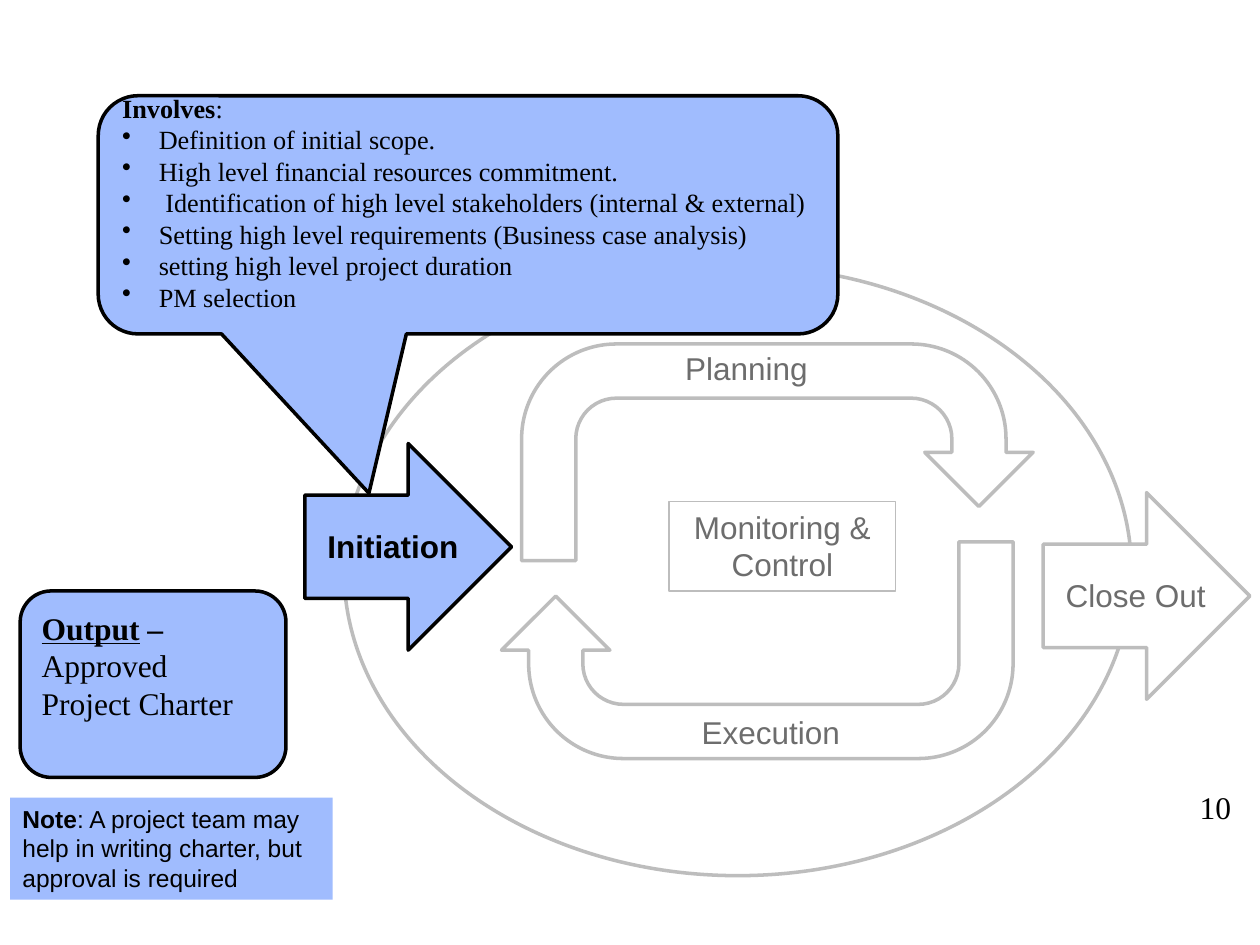
from dataclasses import dataclass

from lxml.etree import SubElement
from pptx import Presentation
from pptx.dml.color import RGBColor
from pptx.enum.shapes import MSO_SHAPE
from pptx.enum.text import MSO_ANCHOR, PP_ALIGN
from pptx.oxml.ns import qn
from pptx.util import Inches, Pt

SANS, SERIF = "Arial", "Times New Roman"
BLACK, WHITE, BLUE = "000000", "FFFFFF", "A0BCFE"
EDGE, GRAY = "BDBDBD", "6D6D6D"


@dataclass
class Box:
    left: float
    top: float
    width: float
    height: float

    def place(self):
        return [Inches(n) for n in (self.left, self.top, self.width, self.height)]


@dataclass
class Style:
    font: str
    size: float
    color: str = BLACK
    bold: bool | None = None


@dataclass
class Label:
    text: str
    box: Box
    style: Style


@dataclass
class Part:
    text: str
    bold: bool = False
    under: bool = False


def color(code: str) -> RGBColor:
    return RGBColor.from_string(code)


def draw(slide, kind, box: Box, fill=None, line=None, weight=2.0, adjust=()):
    shape = slide.shapes.add_shape(kind, *box.place())
    shape.shadow.inherit = False
    if fill:
        shape.fill.solid()
        shape.fill.fore_color.rgb = color(fill)
    else:
        shape.fill.background()
    if line:
        shape.line.color.rgb = color(line)
        shape.line.width = Pt(weight)
    else:
        shape.line.fill.background()
    for i, value in enumerate(adjust):
        shape.adjustments[i] = value
    return shape


def setup(shape, anchor=MSO_ANCHOR.TOP, bottom=0.05):
    frame = shape.text_frame
    frame.word_wrap = True
    frame.vertical_anchor = anchor
    frame.margin_bottom = Inches(bottom)
    return frame


def write(para, parts: list[Part], style: Style, align=PP_ALIGN.LEFT):
    para.alignment = align
    font = para.font
    font.name, font.size, font.bold = style.font, Pt(style.size), style.bold
    font.color.rgb = color(style.color)
    for part in parts:
        run = para.add_run()
        run.text = part.text
        if part.bold:
            run.font.bold = True
        if part.under:
            run.font.underline = True


def bullet(para, indent: float):
    props = para._p.get_or_add_pPr()
    props.set("marL", str(Inches(indent)))
    props.set("indent", str(-Inches(indent)))
    mark = SubElement(props, qn("a:buChar"))
    mark.set("char", "•")
    props.insert(0, mark)


def cycle(slide):
    """Draw the project phases and their labels."""
    draw(slide, MSO_SHAPE.OVAL, Box(2.73, 2.11, 6.25, 4.84), WHITE, EDGE)
    turns = [(Box(4.14, 2.73, 4.06, 1.72), 0), (Box(3.98, 4.3, 4.06, 1.72), 180)]
    for box, angle in turns:
        turn = draw(slide, MSO_SHAPE.U_TURN_ARROW, box, WHITE, EDGE)
        turn.rotation = angle
    arrows = [(8.28, 3.91, WHITE, EDGE), (2.42, 3.52, BLUE, BLACK)]
    for left, top, fill, line in arrows:
        draw(slide, MSO_SHAPE.RIGHT_ARROW, Box(left, top, 1.64, 1.64), fill, line)

    plain = Style(SANS, 18, GRAY)
    labels = [
        Label("Planning", Box(5.34, 2.72, 1.8, 0.4), plain),
        Label("Execution", Box(5.47, 5.61, 1.8, 0.4), plain),
        Label("Initiation", Box(2.5, 4.13, 1.8, 0.4), Style(SANS, 18, BLACK, True)),
        Label("Close Out", Box(8.36, 4.52, 1.56, 0.4), plain),
    ]
    for label in labels:
        text = slide.shapes.add_textbox(*label.box.place())
        write(setup(text).paragraphs[0], [Part(label.text)], label.style)

    control = draw(slide, MSO_SHAPE.RECTANGLE, Box(5.31, 3.98, 1.8, 0.71),
                   line=EDGE, weight=0.75)
    write(setup(control).paragraphs[0], [Part("Monitoring & Control")],
          plain, PP_ALIGN.CENTER)


def callout(slide):
    shape = draw(slide, MSO_SHAPE.ROUNDED_RECTANGULAR_CALLOUT,
                 Box(0.78, 0.76, 5.87, 1.89), BLUE, BLACK,
                 adjust=(-0.134, 1.169, 0.167))
    frame = setup(shape, MSO_ANCHOR.MIDDLE, bottom=0.25)
    style = Style(SERIF, 15)
    write(frame.paragraphs[0], [Part("Involves", bold=True), Part(":")], style)
    items = [
        "Definition of initial scope.",
        "High level financial resources commitment.",
        " Identification of high level stakeholders (internal & external)",
        "Setting high level requirements (Business case analysis)",
        "setting high level project duration",
        "PM selection",
    ]
    for item in items:
        para = frame.add_paragraph()
        write(para, [Part(item)], style)
        bullet(para, 0.29)


def notes(slide):
    """Draw the output box, the remark and the page number."""
    output = draw(slide, MSO_SHAPE.ROUNDED_RECTANGLE,
                  Box(0.16, 4.69, 2.11, 1.48), BLUE, BLACK)
    frame = setup(output, MSO_ANCHOR.MIDDLE, bottom=0.35)
    parts = [Part("Output", bold=True, under=True), Part(" –", bold=True),
             Part(" Approved Project Charter")]
    write(frame.paragraphs[0], parts, Style(SERIF, 18))

    remark = draw(slide, MSO_SHAPE.RECTANGLE, Box(0.08, 6.33, 2.56, 0.81), BLUE)
    parts = [Part("Note", bold=True),
             Part(": A project team may help in writing charter, "
                  "but approval is required")]
    write(setup(remark).paragraphs[0], parts, Style(SANS, 14))

    page = draw(slide, MSO_SHAPE.DOUBLE_BRACKET, Box(9.4, 6.18, 0.6, 0.43),
                adjust=(0.179,))
    write(setup(page).paragraphs[0], [Part("10")], Style(SERIF, 18))


def main():
    deck = Presentation()
    deck.slide_width, deck.slide_height = Inches(10), Inches(7.5)
    slide = deck.slides.add_slide(deck.slide_layouts[6])
    cycle(slide)
    callout(slide)
    notes(slide)
    deck.save("out.pptx")


if __name__ == "__main__":
    main()
